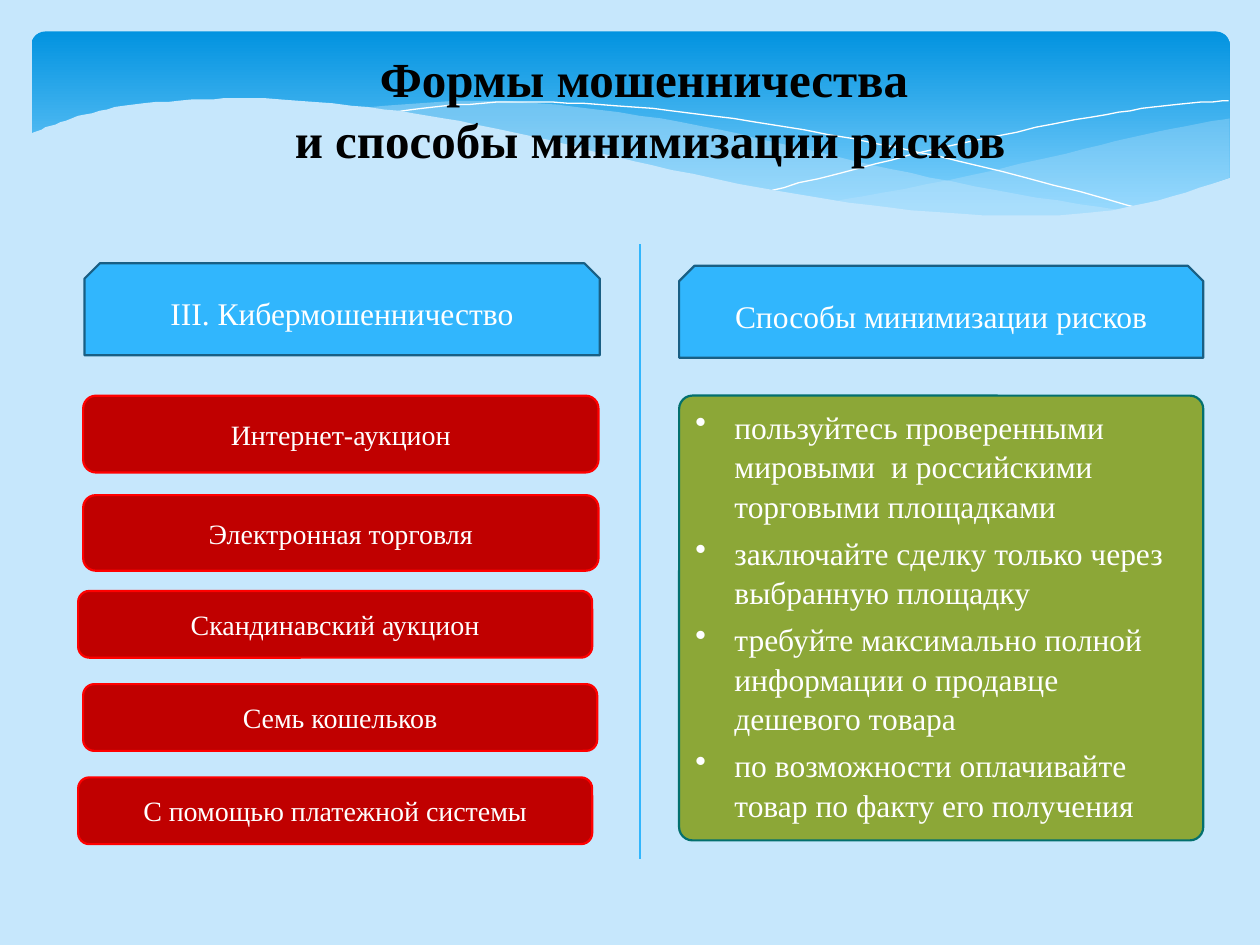
from dataclasses import dataclass
from lxml import etree
from pptx import Presentation
from pptx import util as u
from pptx.dml import color
from pptx.enum import shapes, text
from pptx.oxml import ns

PX = 9144
FORM = shapes.MSO_SHAPE


@dataclass(frozen=True)
class Theme:
    font: str = "Times New Roman"
    pale: str = "C6E7FC"
    deep: str = "0293E0"
    sky: str = "83D3FE"
    blue: str = "31B6FD"
    navy: str = "195F84"
    red: str = "C00000"
    edge: str = "FF0000"
    green: str = "8CA737"
    teal: str = "03706E"
    white: str = "FFFFFF"
    black: str = "000000"
    title: int = 28
    head: int = 18
    item: int = 16
    rim: float = 1.25
    rule: float = 0.75
    lead: float = 1.05


def rgb(code):
    return color.RGBColor.from_string(code)


def smooth(knots, steps=6):
    ends = [knots[0], *knots, knots[-1]]
    dots = [knots[0]]
    for a, b, c, d in zip(ends, ends[1:], ends[2:], ends[3:]):
        for n in range(1, steps + 1):
            t = n / steps
            dots.append(tuple(
                (2 * q + (r - p) * t + (2 * p - 5 * q + 4 * r - s) * t ** 2
                 + (3 * q - p - 3 * r + s) * t ** 3) / 2
                for p, q, r, s in zip(a, b, c, d)))
    return dots


class Deck:
    def __init__(self, theme):
        self.theme = theme
        self.show = Presentation()
        self.show.slide_width, self.show.slide_height = 1000 * PX, 750 * PX
        self.slide = self.show.slides.add_slide(self.show.slide_layouts[6])
        back = self.slide.background.fill
        back.solid()
        back.fore_color.rgb = rgb(theme.pale)

    def paint(self, shape, fill=None, line=None, width=0, alpha=None):
        shape.shadow.inherit = False
        if fill:
            shape.fill.solid()
            shape.fill.fore_color.rgb = rgb(fill)
            if alpha:
                tint = shape._element.spPr.find(".//" + ns.qn("a:srgbClr"))
                etree.SubElement(tint, ns.qn("a:alpha"), val=str(alpha * 1000))
        else:
            shape.fill.background()
        if line:
            shape.line.color.rgb = rgb(line)
            shape.line.width = u.Pt(width)
        else:
            shape.line.fill.background()

    def letter(self, para, words, size, ink, bold=False):
        para.text = words
        font = para.font
        font.name, font.size, font.bold = self.theme.font, u.Pt(size), bold
        font.color.rgb = rgb(ink)

    def box(self, kind, area, fill, line, bend=None):
        shape = self.slide.shapes.add_shape(kind, *(n * PX for n in area))
        self.paint(shape, fill, line, self.theme.rim)
        if bend is not None:
            shape.adjustments[0] = bend
        shape.text_frame.word_wrap = True
        return shape

    def label(self, kind, area, words, size, fill, line):
        frame = self.box(kind, area, fill, line).text_frame
        frame.vertical_anchor = text.MSO_ANCHOR.MIDDLE
        para = frame.paragraphs[0]
        para.alignment = text.PP_ALIGN.CENTER
        self.letter(para, words, size, self.theme.white)

    def title(self, area, words):
        frame = self.slide.shapes.add_textbox(*(n * PX for n in area)).text_frame
        frame.word_wrap = True
        para = frame.paragraphs[0]
        para.alignment = text.PP_ALIGN.CENTER
        para.line_spacing = self.theme.lead
        self.letter(para, words, self.theme.title, self.theme.black, True)

    def tips(self, area, lines):
        look = self.theme
        frame = self.box(FORM.ROUNDED_RECTANGLE, area, look.green, look.teal, 0.03).text_frame
        frame.vertical_anchor = text.MSO_ANCHOR.TOP
        for n, words in enumerate(lines):
            para = frame.add_paragraph() if n else frame.paragraphs[0]
            para.alignment = text.PP_ALIGN.LEFT
            para.space_before = para.space_after = u.Pt(2)
            para.line_spacing = look.lead
            self.letter(para, words, look.head, look.white)
            props = para._p.get_or_add_pPr()
            props.set("marL", str(31 * PX))
            props.set("indent", str(-31 * PX))
            mark = etree.Element(ns.qn("a:buChar"), char="•")
            props.find(ns.qn("a:defRPr")).addprevious(mark)

    def banner(self, area):
        shape = self.box(FORM.ROUNDED_RECTANGLE, area, None, None, 0.07)
        shape.fill.gradient()
        shape.fill.gradient_angle = 270
        tones = (self.theme.deep, 0), (self.theme.sky, 0.9)
        for stop, (tone, place) in zip(shape.fill.gradient_stops, tones):
            stop.color.rgb = rgb(tone)
            stop.position = place

    def wave(self, *curves, close=True, **style):
        dots = [dot for knots in curves for dot in smooth(knots)]
        pen = self.slide.shapes.build_freeform(*dots[0], scale=PX)
        pen.add_line_segments(dots[1:], close=close)
        self.paint(pen.convert_to_shape(), **style)

    def rule(self, start, end):
        line = self.slide.shapes.add_connector(
            shapes.MSO_CONNECTOR.STRAIGHT, *(n * PX for n in (*start, *end)))
        line.line.color.rgb = rgb(self.theme.blue)
        line.line.width = u.Pt(self.theme.rule)
        etree.SubElement(line._element.spPr, ns.qn("a:effectLst"))


def main():
    look = Theme()
    deck = Deck(look)
    deck.banner((25, 25, 951, 156))
    deck.wave([(976, 94), (921, 104), (861, 118), (753, 143), (661, 160)],
              [(661, 160), (732, 168), (803, 172), (863, 170), (921, 160), (976, 141)],
              fill=look.pale, alpha=29)
    deck.wave([(893, 167), (807, 154), (706, 134), (629, 116), (541, 97),
               (442, 83), (361, 80), (286, 86)],
              [(286, 86), (362, 97), (449, 116), (566, 143), (665, 161),
               (761, 171), (838, 172), (893, 167)],
              fill=look.pale, alpha=40)
    deck.wave([(309, 90), (353, 84), (416, 81), (489, 84), (582, 94),
               (695, 114), (795, 136), (907, 166)],
              close=False, line=look.white)
    deck.wave([(613, 151), (695, 130), (776, 111), (866, 93), (924, 84), (975, 80)],
              close=False, line=look.white)
    deck.wave([(977, 141), (920, 159), (863, 169), (793, 171), (708, 165),
               (603, 149), (503, 128), (447, 114), (365, 96), (292, 85),
               (211, 78), (161, 79), (106, 83), (67, 91), (40, 100), (23, 107)],
              [(23, 224), (977, 224)], fill=look.pale)

    deck.title((141, 31, 750, 104),
               "Формы мошенничества \vи способы минимизации рисков")
    heads = (
        ((67, 209, 409, 73), "III. Кибермошенничество"),
        ((539, 211, 416, 73), "Способы минимизации рисков"),
    )
    for area, words in heads:
        deck.label(FORM.SNIP_2_SAME_RECTANGLE, area, words, look.head,
                   look.blue, look.navy)
    schemes = (
        ((66, 314, 409, 61), "Интернет-аукцион"),
        ((66, 393, 409, 60), "Электронная торговля"),
        ((62, 469, 408, 53), "Скандинавский аукцион"),
        ((66, 543, 408, 53), "Семь кошельков"),
        ((62, 617, 408, 53), "С помощью платежной системы"),
    )
    for area, words in schemes:
        deck.label(FORM.ROUNDED_RECTANGLE, area, words, look.item,
                   look.red, look.edge)
    deck.tips((539, 314, 416, 353), (
        "пользуйтесь проверенными мировыми  и российскими торговыми площадками",
        "заключайте сделку только через выбранную площадку",
        "требуйте максимально полной информации о продавце дешевого товара",
        "по возможности оплачивайте товар по факту его получения",
    ))
    deck.rule((508, 194), (508, 682))
    deck.show.save("out.pptx")


if __name__ == "__main__":
    main()
